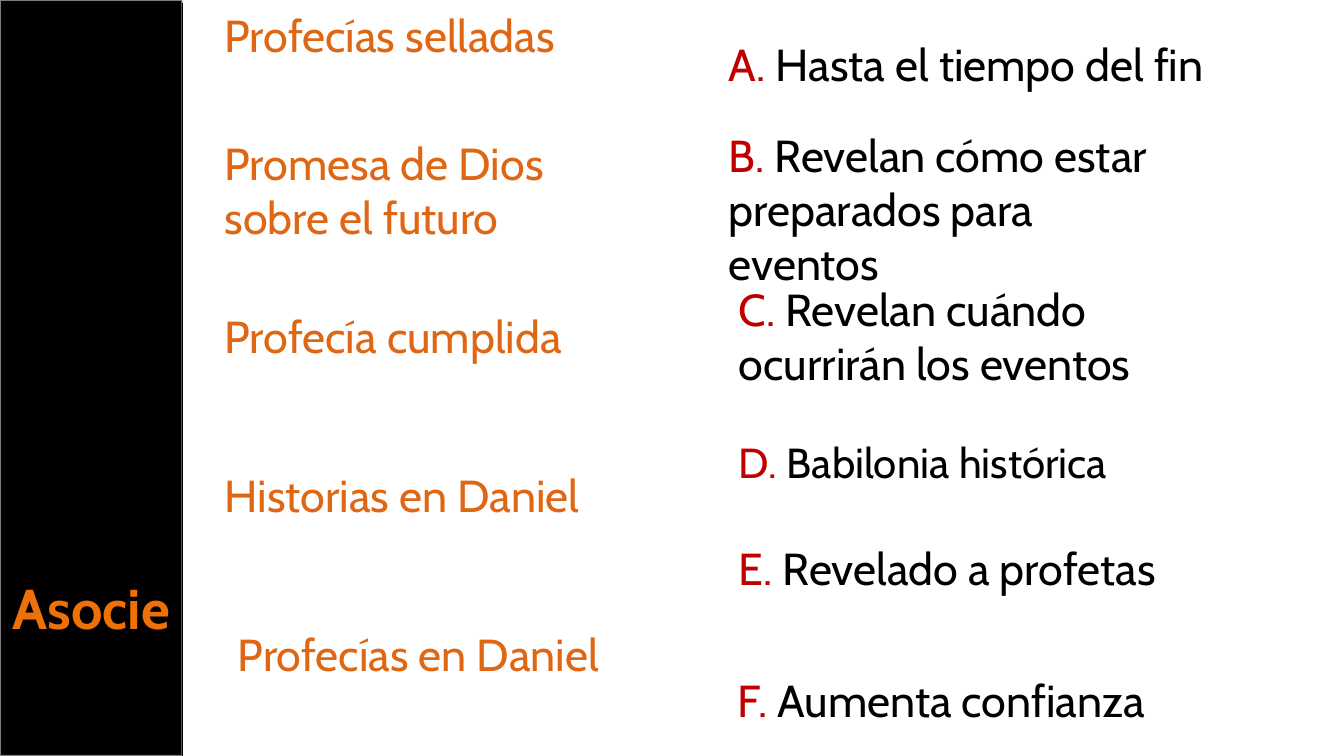
from lxml import etree
from pptx import Presentation
from pptx.dml.color import RGBColor
from pptx.enum.shapes import MSO_CONNECTOR, MSO_SHAPE
from pptx.enum.text import MSO_AUTO_SIZE, PP_ALIGN
from pptx.oxml.ns import qn
from pptx.util import Inches, Pt

FONT = "Cabin"
BAND_WIDTH = 1.81
SLIDE_HEIGHT = 7.5

# left, top, width, height, text
TOPICS = [
    (2.13, 0.03, 4.59, 0.64, "Profecías selladas"),
    (2.13, 1.3, 3.84, 1.18, "Promesa de Dios sobre el futuro"),
    (2.13, 3.01, 4.13, 0.64, "Profecía cumplida"),
    (2.13, 4.59, 4.06, 0.64, "Historias en Daniel"),
    (2.26, 6.17, 4.26, 0.64, "Profecías en Daniel"),
]

# left, top, width, height, size, letter, text
ANSWERS = [
    (7.13, 0.32, 5.51, 0.64, 32, "A. ", "Hasta el tiempo del fin"),
    (7.13, 1.22, 4.78, 1.18, 32, "B. ", "Revelan cómo estar preparados para eventos"),
    (7.23, 2.75, 4.7, 1.18, 32, "C. ", "Revelan cuándo ocurrirán los eventos"),
    (7.23, 4.28, 4.18, 0.61, 30, "D. ", "Babilonia histórica"),
    (7.23, 5.32, 4.53, 0.64, 32, "E. ", "Revelado a profetas"),
    (7.22, 6.62, 5.59, 0.64, 32, "F. ", "Aumenta confianza"),
]


def rgb(color):
    return RGBColor.from_string(color)


def add_text(s, box, runs, size=32, bold=False, align=PP_ALIGN.LEFT):
    """Add a text box whose runs are (text, colour) pairs."""
    tf = s.shapes.add_textbox(*map(Inches, box)).text_frame
    tf.word_wrap = True
    tf.auto_size = MSO_AUTO_SIZE.SHAPE_TO_FIT_TEXT
    p = tf.paragraphs[0]
    p.alignment = align
    for text, color in runs:
        r = p.add_run()
        r.text = text
        r.font.name = FONT
        r.font.size = Pt(size)
        r.font.bold = bold
        r.font.color.rgb = rgb(color)


def add_band(s):
    sp = s.shapes.add_shape(MSO_SHAPE.RECTANGLE, 0, 0,
                            Inches(BAND_WIDTH), Inches(SLIDE_HEIGHT))
    sp.shadow.inherit = False
    sp.fill.solid()
    sp.fill.fore_color.rgb = rgb("000000")
    sp.line.color.rgb = rgb("F9F9F9")
    sp.line.width = Pt(1.35)
    color = sp.line._ln.find(".//" + qn("a:srgbClr"))
    etree.SubElement(color, qn("a:alpha"), val="50000")


def add_band_edge(s):
    line = s.shapes.add_connector(MSO_CONNECTOR.STRAIGHT,
                                  Inches(BAND_WIDTH), Inches(0.03),
                                  Inches(BAND_WIDTH), Inches(SLIDE_HEIGHT))
    line.line.color.rgb = rgb("000000")
    line.line.width = Pt(0.85)
    etree.SubElement(line._element.spPr, qn("a:effectLst"))


def main():
    prs = Presentation()
    prs.slide_width = Inches(13.33)
    prs.slide_height = Inches(SLIDE_HEIGHT)
    s = prs.slides.add_slide(prs.slide_layouts[6])

    add_band(s)
    for *box, text in TOPICS:
        add_text(s, box, [(text, "DF6613")])
    for *box, size, letter, text in ANSWERS:
        add_text(s, box, [(letter, "C00000"), (text, "000000")], size)
    add_text(s, (0, 5.64, BAND_WIDTH, 0.77), [("Asocie", "EE7008")],
             size=40, bold=True, align=PP_ALIGN.CENTER)
    add_band_edge(s)

    prs.save("out.pptx")


if __name__ == "__main__":
    main()
